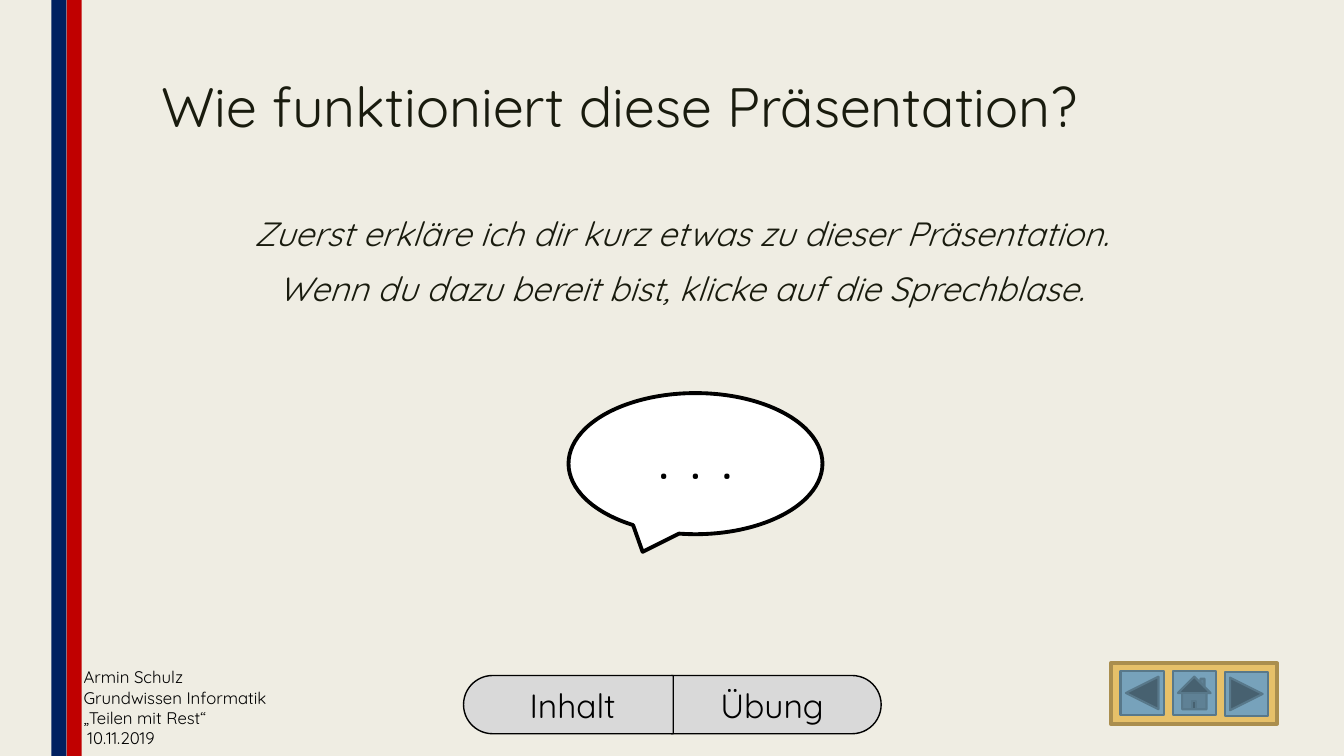
from pptx import Presentation
from pptx import util as u
from pptx.dml.color import RGBColor
from pptx.enum import shapes, text

COLORS = {
    "background": "EFEDE3", "navy": "002060", "red": "C00000",
    "ink": "191B0E", "black": "000000", "white": "FFFFFF", "pill": "D9D9D9",
    "gold": "E6C069", "gold_edge": "AA8E4E",
    "button": "77A2BB", "button_edge": "58788A",
}
FONT = "Quicksand"
SHAPE = shapes.MSO_SHAPE
LEFT, CENTER = text.PP_ALIGN.LEFT, text.PP_ALIGN.CENTER
TOP, MIDDLE = text.MSO_ANCHOR.TOP, text.MSO_ANCHOR.MIDDLE


def color(name):
    return RGBColor.from_string(COLORS[name])


def points(*lengths):
    return [u.Pt(length) for length in lengths]


def write(frame, lines, size=12, ink="black", align=LEFT, anchor=TOP, bold=False,
          italic=False, spacing=1.0, before=0, after=0, direction=None):
    frame.word_wrap = True
    frame.auto_size = text.MSO_AUTO_SIZE.NONE
    frame.vertical_anchor = anchor
    if direction:
        frame._txBody.bodyPr.set("vert", direction)
    for index, line in enumerate(lines):
        paragraph = frame.add_paragraph() if index else frame.paragraphs[0]
        paragraph.alignment = align
        paragraph.line_spacing = spacing
        paragraph.space_before = u.Pt(before)
        paragraph.space_after = u.Pt(after)
        run = paragraph.add_run()
        run.text = line
        run.font.name = FONT
        run.font.size = u.Pt(size)
        run.font.bold = bold
        run.font.italic = italic
        run.font.color.rgb = color(ink)


def add_title(slide, box, words, **style):
    title = slide.shapes.title
    title.left, title.top, title.width, title.height = points(*box)
    write(title.text_frame, [words], **style)


def add_text(slide, box, lines, **style):
    write(slide.shapes.add_textbox(*points(*box)).text_frame, lines, **style)


def add_figure(slide, kind, box, fill, edge=None, edge_width=1):
    figure = slide.shapes.add_shape(kind, *points(*box))
    figure.shadow.inherit = False
    figure.fill.solid()
    figure.fill.fore_color.rgb = color(fill)
    if edge:
        figure.line.color.rgb = color(edge)
        figure.line.width = u.Pt(edge_width)
    else:
        figure.line.fill.background()
    return figure


def add_pill_half(slide, left, label, rotation, direction):
    half = add_figure(slide, SHAPE.ROUND_2_SAME_RECTANGLE,
                      (left, 428.4, 41.6, 149.8), "pill", "black")
    half.adjustments[0] = 0.5
    half.adjustments[1] = 0
    half.rotation = rotation
    write(half.text_frame, [label], size=24, align=CENTER, anchor=MIDDLE,
          direction=direction)


def add_navigation(slide):
    add_figure(slide, SHAPE.RECTANGLE, (793.4, 473.8, 118.8, 43.2),
               "gold", "gold_edge", 2.75)
    buttons = (
        (SHAPE.ACTION_BUTTON_BACK_OR_PREVIOUS, 479.5),
        (SHAPE.ACTION_BUTTON_HOME, 479.5),
        (SHAPE.ACTION_BUTTON_FORWARD_OR_NEXT, 480.2),
    )
    for index, (kind, top) in enumerate(buttons):
        add_figure(slide, kind, (800.4 + 37.2 * index, top, 31, 31),
                   "button", "button_edge", 1.5)


def main():
    deck = Presentation()
    deck.slide_width, deck.slide_height = points(960, 540)
    slide = deck.slides.add_slide(deck.slide_layouts[5])
    slide.background.fill.solid()
    slide.background.fill.fore_color.rgb = color("background")

    add_figure(slide, SHAPE.RECTANGLE, (47.5, 0, 10.8, 540), "red")
    add_figure(slide, SHAPE.RECTANGLE, (36.7, 0, 10.8, 540), "navy")
    add_text(slide, (55.4, 516.2, 157, 15.8), ["10.11.2019"])
    add_text(slide, (52.6, 473, 157, 51.1),
             ["Armin Schulz", "Grundwissen Informatik", "„Teilen mit Rest“"])

    add_title(slide, (108, 54, 756, 76.3), "Wie funktioniert diese Präsentation?",
              size=39.6, ink="ink", spacing=0.89)
    add_text(slide, (109.4, 151.2, 754.6, 94.3),
             ["Zuerst erkläre ich dir kurz etwas zu dieser Präsentation.",
              "Wenn du dazu bereit bist, klicke auf die Sprechblase."],
             size=24, ink="ink", align=CENTER, italic=True,
             spacing=0.94, before=10, after=2)

    bubble = add_figure(slide, SHAPE.OVAL_CALLOUT, (406.1, 280.8, 181.4, 100.8),
                        "white", "black", 2.75)
    write(bubble.text_frame, [".  .  ."], size=28, align=CENTER, anchor=MIDDLE,
          bold=True)

    add_navigation(slide)
    add_pill_half(slide, 533.7, "Übung", 90, "vert270")
    add_pill_half(slide, 385.2, "Inhalt", 270, "vert")
    deck.save("out.pptx")


if __name__ == "__main__":
    main()
